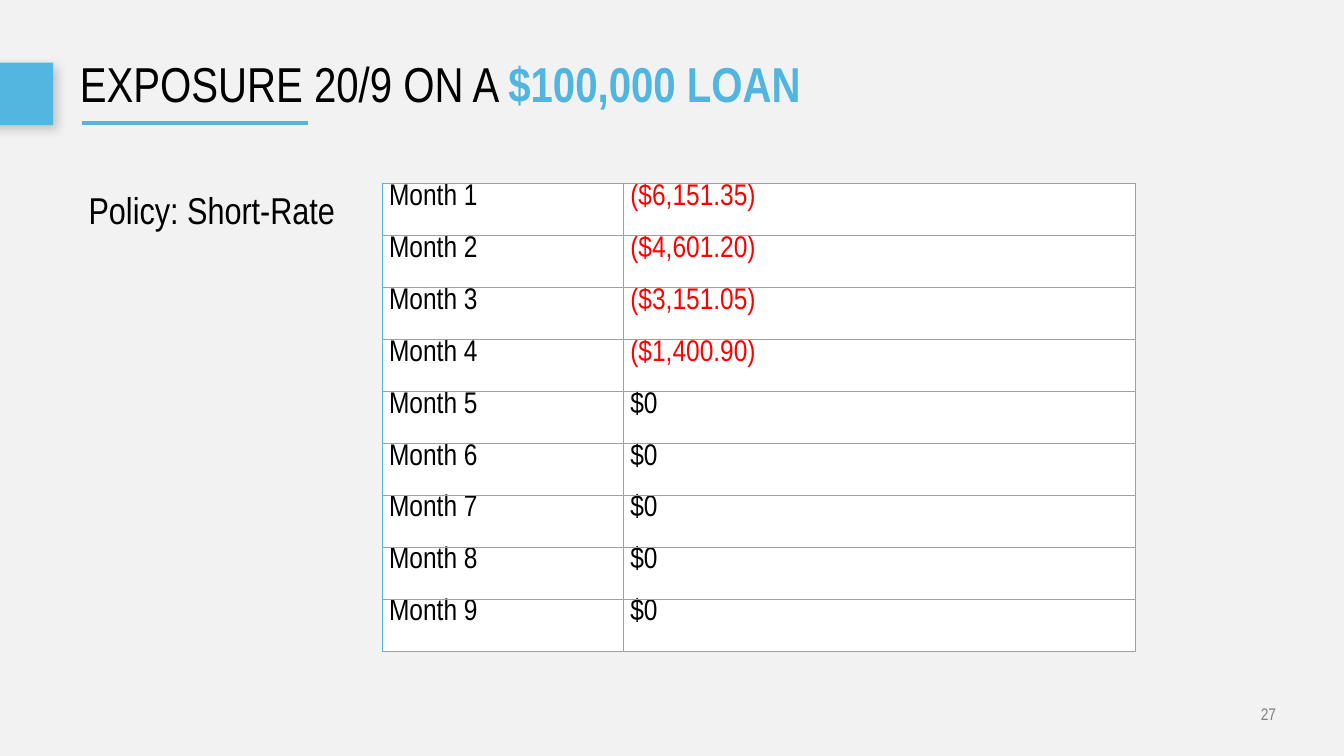
from dataclasses import dataclass

from lxml import etree
from pptx import Presentation
from pptx.dml.color import RGBColor
from pptx.enum import shapes, text
from pptx.oxml import parse_xml
from pptx.oxml.ns import nsdecls, qn
from pptx.util import Pt


@dataclass(frozen=True)
class Theme:
    font: str = "Arial Narrow"
    ink: str = "000000"
    blue: str = "52B6E0"
    edge: str = "51B5E0"
    loss: str = "FF0000"
    grid: str = "A0A0A0"
    dim: str = "808084"
    back: str = "F2F2F2"
    cell: str = "FFFFFF"
    head: float = 52.5
    body: float = 40
    data: float = 32
    note: float = 18


def color(code):
    return RGBColor.from_string(code)


class Deck:
    def __init__(self, theme):
        self.theme = theme
        self.file = Presentation()
        self.file.slide_width, self.file.slide_height = Pt(1440), Pt(810)

    def page(self):
        self.slide = self.file.slides.add_slide(self.file.slide_layouts[5])
        fill = self.slide.background.fill
        fill.solid()
        fill.fore_color.rgb = color(self.theme.back)

    def style(self, font, size, code):
        font.name, font.size = self.theme.font, Pt(size)
        font.color.rgb = color(code)

    def frame(self, frame, anchor, inset=None):
        frame.word_wrap = True
        frame.vertical_anchor = anchor
        if inset is not None:
            frame.margin_left = frame.margin_right = Pt(inset)
            frame.margin_top = frame.margin_bottom = Pt(inset)

    def title(self, plain, strong, left, top, width, height):
        shape = self.slide.shapes.title
        shape.left, shape.top = Pt(left), Pt(top)
        shape.width, shape.height = Pt(width), Pt(height)
        self.frame(shape.text_frame, text.MSO_ANCHOR.MIDDLE, 0)
        shape.text_frame.auto_size = text.MSO_AUTO_SIZE.NONE
        para = shape.text_frame.paragraphs[0]
        para.alignment, para.line_spacing = text.PP_ALIGN.LEFT, 0.9
        self.style(para.font, self.theme.head, self.theme.ink)
        para.add_run().text = plain
        run = para.add_run()
        run.text = strong
        self.style(run.font, self.theme.head, self.theme.edge)
        run.font.bold = True

    def label(self, words, left, top, width, height, size, code,
              align=text.PP_ALIGN.LEFT, anchor=text.MSO_ANCHOR.TOP, inset=None):
        box = self.slide.shapes.add_textbox(Pt(left), Pt(top), Pt(width), Pt(height))
        self.frame(box.text_frame, anchor, inset)
        para = box.text_frame.paragraphs[0]
        para.text, para.alignment = words, align
        self.style(para.font, size, code)

    def block(self, left, top, width, height):
        shape = self.slide.shapes.add_shape(
            shapes.MSO_SHAPE.RECTANGLE, Pt(left), Pt(top), Pt(width), Pt(height))
        shape.fill.solid()
        shape.fill.fore_color.rgb = color(self.theme.blue)
        shape.line.fill.background()
        # Soft shadow, down and to the right
        shape.shadow.inherit = False
        list_ = shape._element.spPr.find(qn("a:effectLst"))
        list_.append(parse_xml(
            f'<a:outerShdw {nsdecls("a")} blurRad="{Pt(12)}" dist="{Pt(7)}" '
            'dir="2700000" algn="tl" rotWithShape="0"><a:srgbClr val="000000">'
            '<a:alpha val="20000"/></a:srgbClr></a:outerShdw>'))

    def rule(self, left, top, width, weight):
        line = self.slide.shapes.add_connector(
            shapes.MSO_CONNECTOR.STRAIGHT, Pt(left), Pt(top), Pt(left + width), Pt(top))
        line.line.color.rgb = color(self.theme.blue)
        line.line.width = Pt(weight)
        etree.SubElement(line._element.spPr, qn("a:effectLst"))

    def border(self, cell, first):
        props = cell._tc.get_or_add_tcPr()
        for spot, side in enumerate(("lnL", "lnR", "lnT", "lnB")):
            code = self.theme.edge if first and side == "lnL" else self.theme.grid
            props.insert(spot, parse_xml(
                f'<a:{side} {nsdecls("a")} w="{Pt(1)}"><a:solidFill>'
                f'<a:srgbClr val="{code}"/></a:solidFill></a:{side}>'))

    def table(self, rows, left, top, widths, height):
        grid = self.slide.shapes.add_table(
            len(rows), len(widths), Pt(left), Pt(top),
            Pt(sum(widths)), Pt(height * len(rows))).table
        grid.first_row = grid.horz_banding = False
        for col, width in zip(grid.columns, widths):
            col.width = Pt(width)
        for row, words in zip(grid.rows, rows):
            row.height = Pt(height)
            for spot, (cell, word) in enumerate(zip(row.cells, words)):
                cell.margin_top = cell.margin_bottom = 0
                cell.fill.solid()
                cell.fill.fore_color.rgb = color(self.theme.cell)
                self.border(cell, spot == 0)
                para = cell.text_frame.paragraphs[0]
                para.text = word
                code = self.theme.loss if word.startswith("(") else self.theme.ink
                self.style(para.font, self.theme.data, code)


def main():
    theme = Theme()
    deck = Deck(theme)
    deck.page()

    # Heading with its side block and underline
    deck.block(-36.7, 67, 93.6, 67)
    deck.rule(87.8, 131.8, 242.7, 5)
    deck.title("EXPOSURE 20/9 ON A ", "$100,000 LOAN", 85.7, 42.5, 1281.6, 101.5)

    # Page number
    deck.label("27", 1043.3, 751, 324, 27.4, theme.note, theme.dim,
               text.PP_ALIGN.RIGHT, text.MSO_ANCHOR.MIDDLE, 0)

    # Policy and its exposure by month
    deck.label("Policy: Short-Rate", 87.8, 196.6, 332.6, 55.4, theme.body, theme.ink)
    losses = ["($6,151.35)", "($4,601.20)", "($3,151.05)", "($1,400.90)"]
    sums = losses + ["$0"] * 5
    rows = [(f"Month {month}", value) for month, value in enumerate(sums, 1)]
    deck.table(rows, 409.7, 196.6, (258.5, 548.6), 55.7)

    deck.file.save("out.pptx")


if __name__ == "__main__":
    main()
